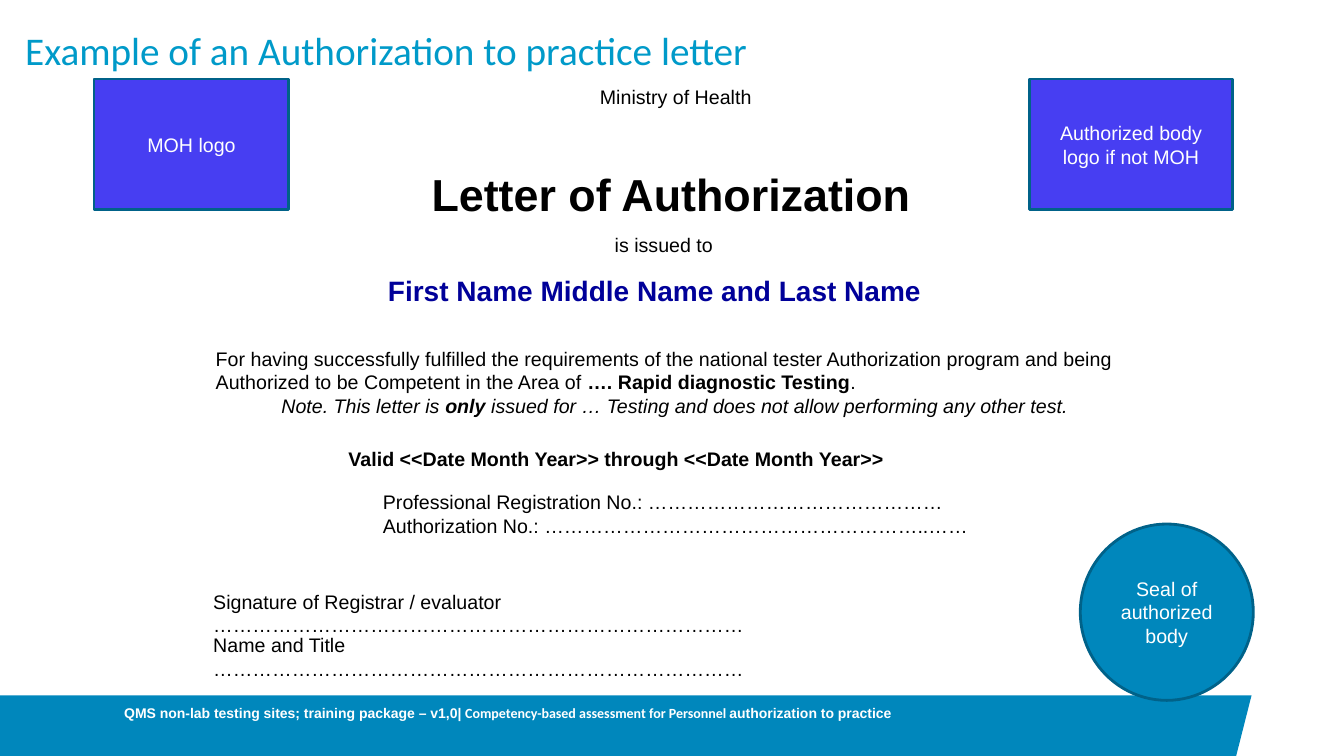
from pptx import Presentation
from pptx.dml.color import RGBColor as Rgb
from pptx.enum.shapes import MSO_SHAPE as Kind
from pptx.enum.text import MSO_ANCHOR as Anchor, MSO_AUTO_SIZE as Fit, PP_ALIGN as Align
from pptx.util import Inches, Pt

COLS = 160  # square cells: 160 across and 90 down the slide
HUES = {"ink": "000000", "name": "000099", "white": "FFFFFF", "head": "009AC9",
        "band": "0087BC", "edge": "006289", "logo": "473EF2"}


def rgb(hue):
    return Rgb.from_string(HUES[hue])


class Page:
    """Holds the text style and the slide; lengths are grid cells."""

    base = {"size": Pt(14), "name": "Arial", "bold": False, "italic": False}

    def __init__(self, deck):
        self.cell = deck.slide_width / COLS
        self.slide = deck.slides.add_slide(deck.slide_layouts[5])
        self.shapes = self.slide.shapes

    def grid(self, *cells):
        return [round(n * self.cell) for n in cells]

    def fill_in(self, frame, lines, hue="ink", align=Align.LEFT, **style):
        """Fill a frame; a line is a string or a list of (text, changes)."""
        frame.word_wrap = True
        for i, line in enumerate(lines):
            para = frame.add_paragraph() if i else frame.paragraphs[0]
            para.alignment = align[i] if isinstance(align, list) else align
            runs = [(line, {})] if isinstance(line, str) else line
            for text, diff in runs:
                run = para.add_run()
                run.text = text
                for key, val in {**self.base, **style, **diff}.items():
                    setattr(run.font, key, val)
                run.font.color.rgb = rgb(hue)

    def title(self, box, text):
        head = self.shapes.title
        head.left, head.top, head.width, head.height = self.grid(*box)
        frame = head.text_frame
        form = {"margin_left": 0, "margin_right": 0, "margin_top": 0, "margin_bottom": 0,
                "vertical_anchor": Anchor.BOTTOM, "auto_size": Fit.NONE}
        for key, val in form.items():
            setattr(frame, key, val)
        self.fill_in(frame, [text], "head", size=Pt(28), name="Calibri")

    def text(self, box, *lines, **style):
        frame = self.shapes.add_textbox(*self.grid(*box)).text_frame
        self.fill_in(frame, lines, **style)

    def badge(self, kind, box, fill, text):
        shape = self.shapes.add_shape(kind, *self.grid(*box))
        self.paint(shape, fill)
        shape.line.color.rgb = rgb("edge")
        shape.line.width = Pt(2)
        shape.text_frame.vertical_anchor = Anchor.MIDDLE
        self.fill_in(shape.text_frame, [text], "white", Align.CENTER)

    def band(self, points, fill):
        first, *rest = [self.grid(*p) for p in points]
        pen = self.shapes.build_freeform(*first)
        pen.add_line_segments(rest, close=True)
        shape = pen.convert_to_shape()
        self.paint(shape, fill)
        shape.line.fill.background()

    def paint(self, shape, fill):
        shape.shadow.inherit = False
        shape.fill.solid()
        shape.fill.fore_color.rgb = rgb(fill)


def main():
    deck = Presentation()
    deck.slide_width, deck.slide_height = Inches(13.33), Inches(7.5)
    page = Page(deck)
    bold, slant = {"bold": True}, {"italic": True}

    # Footer band and title
    page.band([(0, 82.8), (149, 82.8), (147.1, 90.3), (0, 90.3)], "band")
    page.title((3, -3.7, 138, 12.4), "Example of an Authorization to practice letter")

    # Letter heading
    page.text((32.2, 9.5, 96.5, 4.8), "Ministry of Health", align=Align.CENTER)
    page.text((50.2, 19.2, 60.1, 7.7), "Letter of Authorization", size=Pt(32), bold=True)
    page.text((72, 27.2, 16.7, 4.8), "is issued to")
    page.text((45, 32, 66.6, 5.3), "First Name Middle Name and Last Name",
              hue="name", size=Pt(20), bold=True)

    # Statement and validity
    page.text((24.5, 40.7, 111.7, 9.7),
              [("For having successfully fulfilled the requirements of the national tester "
                "Authorization program and being Authorized to be Competent in the Area of ", {}),
               ("…. Rapid diagnostic Testing", bold), (".", {})],
              [("Note. This letter is ", slant), ("only ", {**bold, **slant}),
               ("issued for … Testing and does not allow performing any other test.", slant)],
              align=[Align.LEFT, Align.CENTER])
    page.text((40.3, 52.6, 80, 4.8),
              "Valid <<Date Month Year>> through <<Date Month Year>>", bold=True)

    # Numbers and signatures
    page.text((44.4, 57.8, 80, 6.8),
              "Professional Registration No.: " + "…" * 15,
              "Authorization No.: " + "…" * 19 + ".." + "…" * 2)
    rule = "…" * 27
    page.text((24.2, 69.6, 100, 4.1), f"Signature of Registrar / evaluator {rule}")
    page.text((24.2, 74.8, 77.4, 4.8), f"Name and Title {rule}")

    # Logo boxes and seal
    page.badge(Kind.OVAL, (128.6, 62.4, 20.6, 21), "band", "Seal of authorized body")
    page.badge(Kind.RECTANGLE, (122.6, 9.4, 24.1, 15.6), "logo",
               "Authorized body logo if not MOH")
    page.badge(Kind.RECTANGLE, (11.2, 9.4, 23.2, 15.6), "logo", "MOH logo")

    # Footer text
    page.text((13.6, 83.3, 103.4, 3.2),
              [("QMS non-lab testing sites; training package – v1,0| ", {}),
               ("Competency-based assessment for Personnel ", {"name": "Calibri"}),
               ("authorization to practice", {})],
              hue="white", size=Pt(10), bold=True)

    deck.save("out.pptx")


if __name__ == "__main__":
    main()
